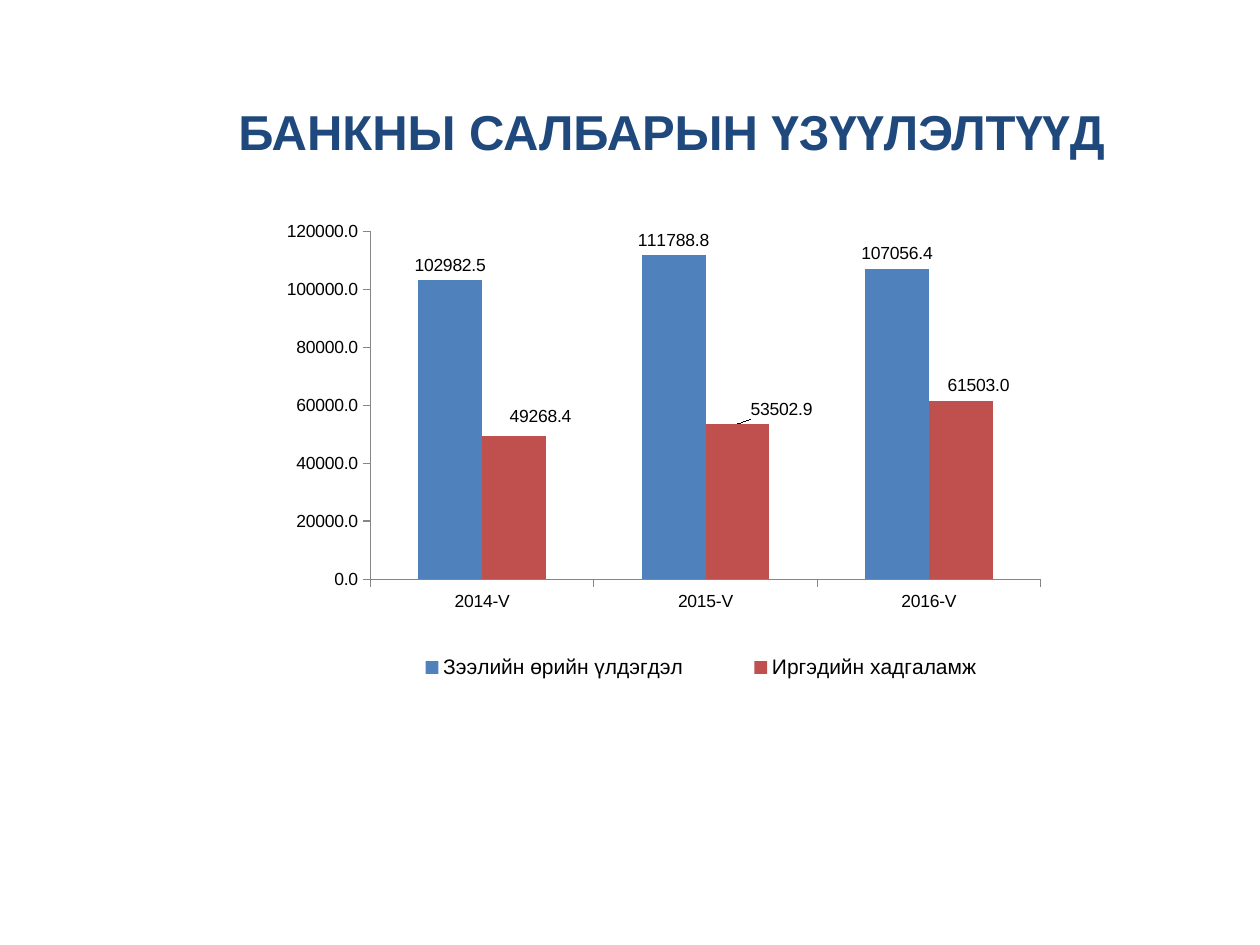
from pptx import Presentation
from pptx.chart.data import CategoryChartData
from pptx.dml.color import RGBColor
from pptx.enum.chart import XL_CHART_TYPE, XL_LABEL_POSITION, XL_LEGEND_POSITION, XL_TICK_MARK
from pptx.enum.text import MSO_ANCHOR, PP_ALIGN
from pptx.oxml import parse_xml
from pptx.oxml.ns import nsdecls, qn
from pptx.util import Inches, Pt

COLUMN = XL_CHART_TYPE.COLUMN_CLUSTERED
OUTSIDE_END = XL_LABEL_POSITION.OUTSIDE_END
BOTTOM = XL_LEGEND_POSITION.BOTTOM
TICK_OUT, TICK_NONE = XL_TICK_MARK.OUTSIDE, XL_TICK_MARK.NONE
MIDDLE, CENTER = MSO_ANCHOR.MIDDLE, PP_ALIGN.CENTER

FONT, FORMAT = "Arial", "0.0"
TITLE = "БАНКНЫ САЛБАРЫН ҮЗҮҮЛЭЛТҮҮД"
TITLE_BOX = (1.08, 0.83, 8.5, 0.67)
CHART_BOX = (1.75, 1.58, 7, 4.25)
PERIODS = ["2014-V", "2015-V", "2016-V"]
SERIES = [
    ("Зээлийн өрийн үлдэгдэл", "4F81BD", [102982.5, 111788.8, 107056.4]),
    ("Иргэдийн хадгаламж", "C0504D", [49268.4, 53502.9, 61503.0]),
]
PLOT_AREA = dict(x=0.17, y=0.06, w=0.76, h=0.65)
LEGEND_AREA = dict(x=0.16, y=0.83, w=0.77, h=0.09)
SAVINGS_LABEL_SHIFTS = [(0.03, -0.01), (0.05, 0), (0.02, 0)]


def rgb(value):
    return RGBColor.from_string(value)


def style_font(font, size, color="000000", bold=False):
    font.name, font.size, font.bold = FONT, Pt(size), bold
    font.color.rgb = rgb(color)


def set_layout(element, index, values, modes=()):
    for old in element.findall(qn("c:layout")):
        element.remove(old)
    parts = [f'<c:{name} val="{value}"/>' for name, value in [*modes, *values.items()]]
    element.insert(index, parse_xml(
        f'<c:layout {nsdecls("c")}><c:manualLayout>{"".join(parts)}'
        '</c:manualLayout></c:layout>'))


def add_title(slide):
    tf = slide.shapes.add_textbox(*map(Inches, TITLE_BOX)).text_frame
    tf.word_wrap = True
    tf.vertical_anchor = MIDDLE
    tf.margin_bottom = Inches(0.3)
    p = tf.paragraphs[0]
    p.alignment = CENTER
    r = p.add_run()
    r.text = TITLE
    style_font(r.font, 28, "1F497D", True)


def add_bank_chart(slide):
    data = CategoryChartData(number_format=FORMAT)
    data.categories = PERIODS
    for name, _, values in SERIES:
        data.add_series(name, values)
    chart = slide.shapes.add_chart(COLUMN, *map(Inches, CHART_BOX), data).chart
    style_font(chart.font, 10)
    chart.has_title = False

    for axis in (chart.category_axis, chart.value_axis):
        axis.has_major_gridlines = False
        axis.major_tick_mark, axis.minor_tick_mark = TICK_OUT, TICK_NONE
        axis.format.line.color.rgb = rgb("868686")
        style_font(axis.tick_labels.font, 10)
    axis = chart.value_axis
    axis.minimum_scale, axis.maximum_scale, axis.major_unit = 0, 120000, 20000
    axis.tick_labels.number_format = FORMAT
    axis.tick_labels.number_format_is_linked = False

    plot = chart.plots[0]
    plot.gap_width, plot.overlap, plot.vary_by_categories = 150, 0, False
    for series, (_, color, _) in zip(plot.series, SERIES):
        series.format.fill.solid()
        series.format.fill.fore_color.rgb = rgb(color)
        labels = series.data_labels
        labels.show_value = True
        labels.position = OUTSIDE_END
        labels.number_format, labels.number_format_is_linked = FORMAT, False
        style_font(labels.font, 10)

    savings = plot.series[1]
    for i, (x, y) in enumerate(SAVINGS_LABEL_SHIFTS):
        label = savings.points[i].data_label
        label.position = OUTSIDE_END
        style_font(label.font, 10)
        element = savings.data_labels._element.findall(qn("c:dLbl"))[i]
        set_layout(element, 1, dict(x=x, y=y))

    chart.has_legend = True
    legend = chart.legend
    legend.position, legend.include_in_layout = BOTTOM, False
    style_font(legend.font, 12)
    edges = [("xMode", "edge"), ("yMode", "edge")]
    set_layout(legend._element, 1, LEGEND_AREA, edges)
    plot_area = chart._chartSpace.chart.plotArea
    set_layout(plot_area, 0, PLOT_AREA, [("layoutTarget", "inner"), *edges])


def main():
    prs = Presentation()
    prs.slide_width, prs.slide_height = Inches(10), Inches(7.5)
    slide = prs.slides.add_slide(prs.slide_layouts[6])
    add_title(slide)
    add_bank_chart(slide)
    prs.save("out.pptx")


if __name__ == "__main__":
    main()
